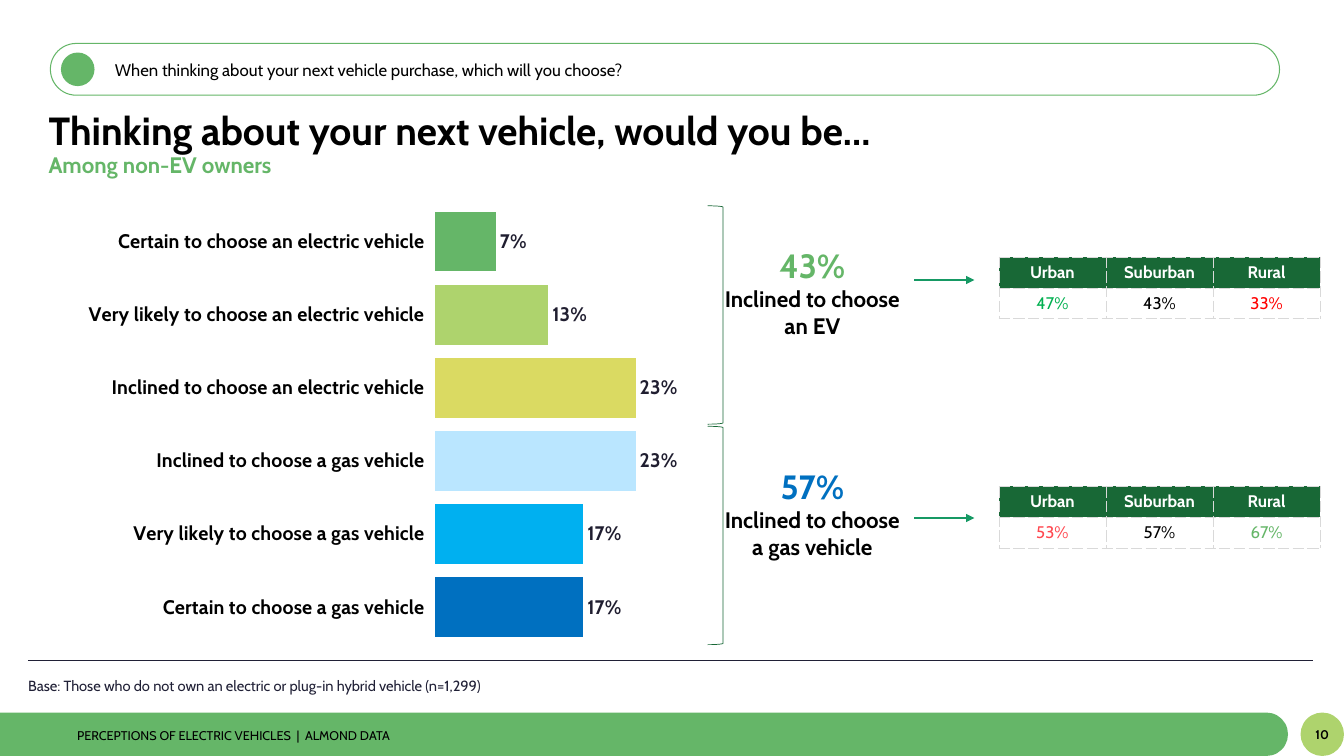
from lxml import etree
from pptx import Presentation
from pptx.chart.data import CategoryChartData
from pptx.dml.color import RGBColor
from pptx.enum import chart as ch, shapes, text
from pptx.oxml import parse_xml
from pptx.oxml.ns import nsdecls, qn
from pptx.util import Pt

FONT = "Cabin"
BLACK = RGBColor(0x00, 0x00, 0x00)
WHITE = RGBColor(0xFF, 0xFF, 0xFF)
NAVY = RGBColor(0x20, 0x20, 0x36)
INK = RGBColor(0x20, 0x1E, 0x30)
GREEN = RGBColor(0x65, 0xB6, 0x68)
LIME = RGBColor(0xAE, 0xD3, 0x6D)
GOLD = RGBColor(0xDA, 0xDA, 0x62)
SKY = RGBColor(0xBA, 0xE6, 0xFF)
AZURE = RGBColor(0x00, 0xB0, 0xF0)
BLUE = RGBColor(0x00, 0x70, 0xC0)
FOREST = RGBColor(0x18, 0x68, 0x36)
TEAL = RGBColor(0x16, 0x99, 0x64)
LEAF = RGBColor(0x00, 0xB0, 0x50)
RED = RGBColor(0xFF, 0x00, 0x00)
CORAL = RGBColor(0xFF, 0x48, 0x50)

LEFT, MID = text.PP_ALIGN.LEFT, text.PP_ALIGN.CENTER
TOP, CENTER = text.MSO_ANCHOR.TOP, text.MSO_ANCHOR.MIDDLE
SHAPE = shapes.MSO_SHAPE

CHOICES = [
    ("Certain to choose an electric vehicle", 0.07, GREEN),
    ("Very likely to choose an electric vehicle", 0.13, LIME),
    ("Inclined to choose an electric vehicle", 0.23, GOLD),
    ("Inclined to choose a gas vehicle", 0.23, SKY),
    ("Very likely to choose a gas vehicle", 0.17, AZURE),
    ("Certain to choose a gas vehicle", 0.17, BLUE),
]
AREAS = ["Urban", "Suburban", "Rural"]


class Deck:
    """Holds the style and the slide being drawn; boxes are (left, top, width, height) in points."""

    def __init__(self):
        self.prs = Presentation()
        self.prs.slide_width, self.prs.slide_height = Pt(960), Pt(540)
        self.slide = self.prs.slides.add_slide(self.prs.slide_layouts[5])
        self.items = self.slide.shapes

    def font(self, font, size, color, bold=False):
        font.name, font.size, font.bold = FONT, Pt(size), bold
        font.color.rgb = color

    def fill_text(self, frame, lines, align=LEFT, anchor=TOP, space=1.0):
        """Each line is (words, size, colour, bold)."""
        frame.word_wrap = True
        frame.auto_size = text.MSO_AUTO_SIZE.NONE
        frame.vertical_anchor = anchor
        for i, (words, *style) in enumerate(lines):
            para = frame.add_paragraph() if i else frame.paragraphs[0]
            para.text = words
            para.alignment, para.line_spacing = align, space
            para.space_before = Pt(0)
            self.font(para.font, *style)

    def title(self, box, lines):
        shape = self.items.title
        shape.left, shape.top, shape.width, shape.height = map(Pt, box)
        self.fill_text(shape.text_frame, lines, anchor=CENTER, space=0.9)

    def label(self, box, lines, **opts):
        shape = self.items.add_textbox(*map(Pt, box))
        self.fill_text(shape.text_frame, lines, **opts)

    def shape(self, kind, box, fill=None, line=None, width=0.5):
        shape = self.items.add_shape(kind, *map(Pt, box))
        shape.shadow.inherit = False
        if fill is None:
            shape.fill.background()
        else:
            shape.fill.solid()
            shape.fill.fore_color.rgb = fill
        if line is None:
            shape.line.fill.background()
        else:
            shape.line.color.rgb, shape.line.width = line, Pt(width)
        return shape

    def rule(self, left, right, y, color, width, arrow=False):
        line = self.items.add_connector(
            shapes.MSO_CONNECTOR.STRAIGHT, Pt(left), Pt(y), Pt(right), Pt(y))
        line.line.color.rgb, line.line.width = color, Pt(width)
        if arrow:
            etree.SubElement(line.line._get_or_add_ln(), qn("a:tailEnd"), type="triangle")
        etree.SubElement(line._element.spPr, qn("a:effectLst"))

    def chart(self, box, rows):
        names, values, colors = zip(*rows)
        data = CategoryChartData(number_format="0%")
        data.categories = names
        data.add_series("Series 1", values)
        chart = self.items.add_chart(
            ch.XL_CHART_TYPE.BAR_CLUSTERED, *map(Pt, box), data).chart
        chart.has_legend = chart.has_title = False
        self.font(chart.font, 16, BLACK, True)

        cat, val = chart.category_axis, chart.value_axis
        cat.reverse_order = True
        cat.format.line.fill.background()
        self.font(cat.tick_labels.font, 14, BLACK, True)
        val.minimum_scale, val.maximum_scale = 0, 1
        val.has_major_gridlines = val.visible = False

        plot = chart.plots[0]
        plot.gap_width, plot.vary_by_categories = 23, False
        plot.has_data_labels = True
        tags = plot.data_labels
        tags.show_value = True
        tags.number_format, tags.number_format_is_linked = "0%", False
        tags.position = ch.XL_LABEL_POSITION.OUTSIDE_END
        self.font(tags.font, 14, INK, True)
        for i, color in enumerate(colors):
            fill = plot.series[0].points[i].format.fill
            fill.solid()
            fill.fore_color.rgb = color
        self.place_plot(chart, x=0.316, y=0.033, w=0.669, h=0.934)

    def place_plot(self, chart, **parts):
        """Fix the inner plot area as fractions of the chart."""
        area = chart._chartSpace.chart.plotArea
        for old in area.findall(qn("c:layout")):
            area.remove(old)
        modes = '<c:xMode val="edge"/><c:yMode val="edge"/>'
        sizes = "".join(f'<c:{k} val="{v}"/>' for k, v in parts.items())
        area.insert(0, parse_xml(
            f'<c:layout {nsdecls("c")}><c:manualLayout><c:layoutTarget val="inner"/>'
            f'{modes}{sizes}</c:manualLayout></c:layout>'))

    def cell(self, cell, words, color, fill=None):
        cell.margin_left = cell.margin_right = cell.margin_top = cell.margin_bottom = 0
        cell.vertical_anchor = CENTER
        para = cell.text_frame.paragraphs[0]
        para.text, para.alignment = words, MID
        self.font(para.font, 12, color, fill is not None)
        props = cell._tc.get_or_add_tcPr()
        for side in "LRTB":
            props.append(parse_xml(
                f'<a:ln{side} {nsdecls("a")} w="3175"><a:solidFill><a:srgbClr val="D9D9D9"/>'
                f'</a:solidFill><a:prstDash val="lgDash"/></a:ln{side}>'))
        if fill is None:
            cell.fill.background()
        else:
            cell.fill.solid()
            cell.fill.fore_color.rgb = fill

    def table(self, left, top, heads, values):
        grid = self.items.add_table(
            2, len(heads), Pt(left), Pt(top), Pt(76.5 * len(heads)), Pt(44)).table
        for row in grid.rows:
            row.height = Pt(22)
        for i, (head, (words, color)) in enumerate(zip(heads, values)):
            grid.columns[i].width = Pt(76.5)
            self.cell(grid.cell(0, i), head, WHITE, FOREST)
            self.cell(grid.cell(1, i), words, color)

    def group(self, top, text_top, arrow_y, table_top, share, color, words, values):
        """Bracket, total, arrow and breakdown for three bars."""
        self.label((509, text_top, 142.5, 75),
                   [(share, 24, color, True), (words, 16, BLACK, True)], align=MID)
        self.shape(SHAPE.RIGHT_BRACKET, (505.5, top, 11, 156), line=FOREST)
        self.rule(653, 696, arrow_y, TEAL, 1, arrow=True)
        self.table(713.5, table_top, AREAS, values)


def main():
    deck = Deck()
    bar = deck.shape(SHAPE.ROUND_2_SAME_RECTANGLE, (444.5, 64.5, 31, 920), GREEN)
    bar.rotation = 90
    bar.adjustments[0] = 0.5
    page = deck.shape(SHAPE.OVAL, (929, 509, 31, 31), LIME)
    frame = page.text_frame
    frame.margin_left = frame.margin_right = 0
    deck.fill_text(frame, [("10", 9, BLACK, True)], align=MID, anchor=CENTER)
    deck.label((48, 517.5, 689, 16),
               [("PERCEPTIONS OF ELECTRIC VEHICLES  |  ALMOND DATA", 9, BLACK)], space=0.9)

    pill = deck.shape(SHAPE.ROUNDED_RECTANGLE, (36, 31, 878, 37), line=GREEN, width=0.75)
    pill.adjustments[0] = 0.5
    deck.shape(SHAPE.OVAL, (43.5, 37.5, 24, 24), GREEN)
    deck.label((75, 39, 831, 22), [(
        "When thinking about your next vehicle purchase, which will you choose?",
        12, BLACK)], anchor=CENTER)
    deck.title((27.5, 82, 878, 43), [
        ("Thinking about your next vehicle, would you be…", 28, BLACK, True),
        ("Among non-EV owners", 16, GREEN, True)])

    deck.chart((16, 135.5, 932.5, 335.5), CHOICES)
    deck.group(147, 171.5, 200, 183.5, "43%", GREEN, "Inclined to choose an EV",
               [("47%", LEAF), ("43%", BLACK), ("33%", RED)])
    deck.group(304.5, 329, 370, 347.5, "57%", BLUE, "Inclined to choose a gas vehicle",
               [("53%", CORAL), ("57%", BLACK), ("67%", GREEN)])

    deck.rule(20, 938, 472, NAVY, 0.5)
    deck.label((13, 481.5, 760, 24), [(
        "Base: Those who do not own an electric or plug-in hybrid vehicle (n=1,299)",
        10.5, NAVY)], space=0.9)
    deck.prs.save("out.pptx")


if __name__ == "__main__":
    main()
